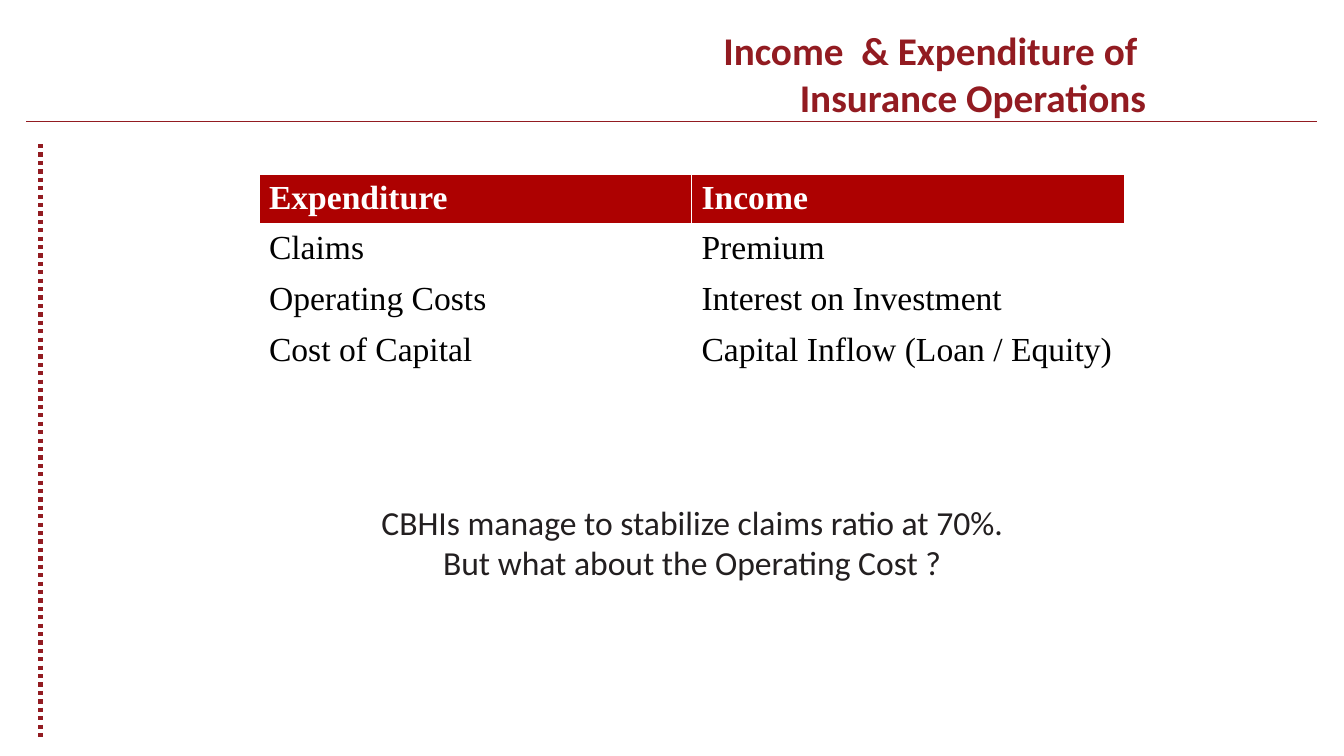
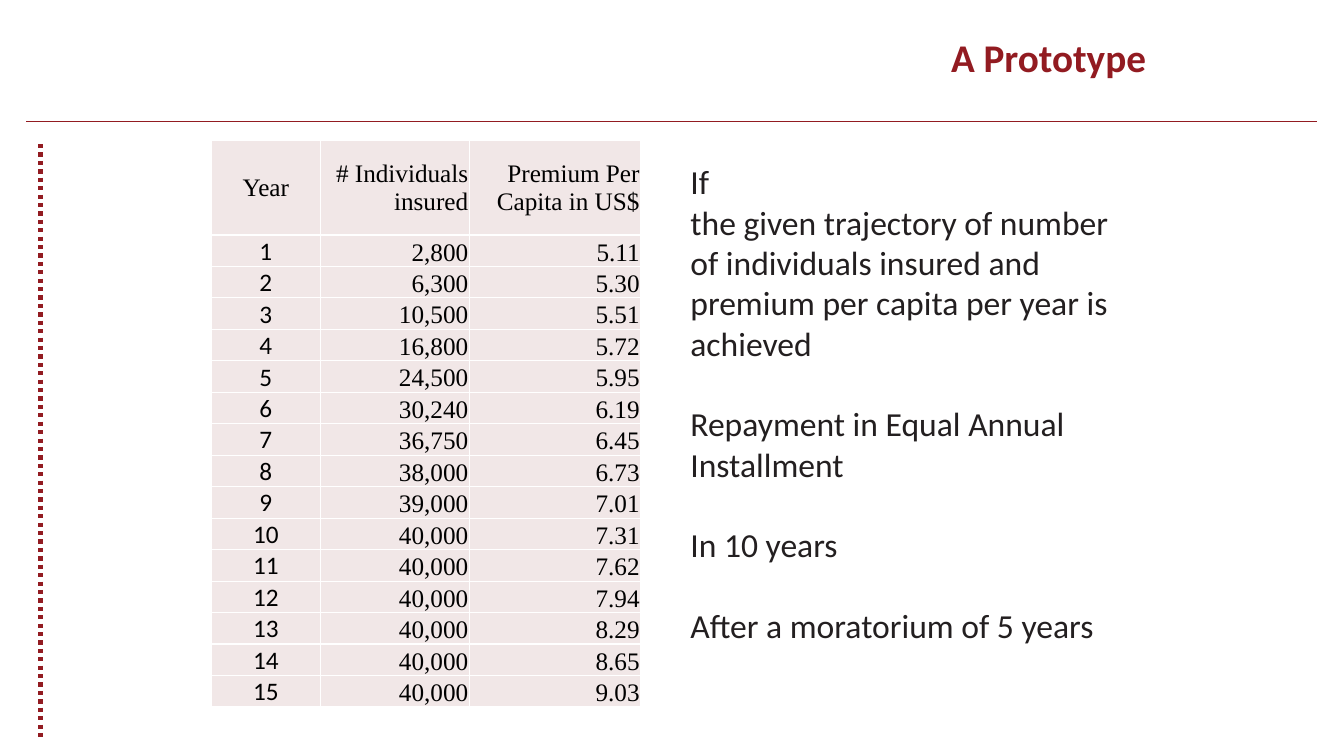
import dataclasses

import lxml.etree
import pptx
import pptx.dml.color
import pptx.enum.dml
import pptx.enum.shapes
import pptx.enum.text
import pptx.oxml.ns
import pptx.util

Cm = pptx.util.Cm
Pt = pptx.util.Pt
ALIGN = pptx.enum.text.PP_ALIGN
ANCHOR = pptx.enum.text.MSO_ANCHOR
qn = pptx.oxml.ns.qn


@dataclasses.dataclass(frozen=True)
class Theme:
    crimson: str = "921B21"
    header_red: str = "AD0101"
    blush: str = "F1E7E7"
    ink: str = "231F20"
    black: str = "000000"
    white: str = "FFFFFF"
    sans: str = "Calibri"
    serif: str = "Times New Roman"
    title_size: int = 28
    body_size: int = 24
    data_size: int = 18


THEME = Theme()
WIDTH, HEIGHT = 33.87, 19.05
CELL_INSETS = (0.25, 0.13, 0.25, 0.13)
TIGHT_INSETS = (0.03, 0.03, 0.03, 0)


def rgb(value):
    return pptx.dml.color.RGBColor.from_string(value)


def write(frame, *lines, size=THEME.body_size, font=THEME.sans, color=THEME.ink,
          bold=False, align=ALIGN.LEFT, gaps=()):
    """Fill a text frame, one paragraph a line; gaps lists the lines set one line lower."""
    frame.word_wrap = True
    for index, line in enumerate(lines):
        paragraph = frame.paragraphs[0] if index == 0 else frame.add_paragraph()
        paragraph.alignment = align
        paragraph.space_before = Pt(size * 1.2 if index in gaps else 0)
        run = paragraph.add_run()
        run.text = line
        run.font.size = Pt(size)
        run.font.name = font
        run.font.bold = bold
        run.font.color.rgb = rgb(color)


def add_text(slide, box, *lines, **style):
    frame = slide.shapes.add_textbox(*map(Cm, box)).text_frame
    write(frame, *lines, **style)


def add_line(slide, start, end, weight, dash=None):
    line = slide.shapes.add_connector(
        pptx.enum.shapes.MSO_CONNECTOR.STRAIGHT, *map(Cm, start + end))
    line.line.color.rgb = rgb(THEME.crimson)
    line.line.width = Pt(weight)
    if dash:
        line.line.dash_style = dash
    lxml.etree.SubElement(line._element.spPr, qn("a:effectLst"))


def add_page(deck, title_top, *title):
    """Add a slide with its header rule, dotted margin and right-aligned title."""
    slide = deck.slides.add_slide(deck.slide_layouts[6])
    add_line(slide, (0.66, 3.07), (33.2, 3.07), 0.75)
    add_line(slide, (1.02, 3.63), (1.02, 18.64), 3,
             pptx.enum.dml.MSO_LINE.ROUND_DOT)
    add_text(slide, (13.13, title_top, 16, 2.39), *title, size=THEME.title_size,
             color=THEME.crimson, bold=True, align=ALIGN.RIGHT)
    return slide


def add_grid(slide, left, top, widths, heights):
    """Add a plain table whose columns and rows have the given sizes."""
    table = slide.shapes.add_table(
        len(heights), len(widths), Cm(left), Cm(top),
        Cm(sum(widths)), Cm(sum(heights))).table
    table.first_row = table.horz_banding = False
    for column, width in zip(table.columns, widths):
        column.width = Cm(width)
    for row, height in zip(table.rows, heights):
        row.height = Cm(height)
    return table


def fill_cell(cell, text, fill=None, insets=CELL_INSETS, anchor=ANCHOR.TOP,
              bottom_weight=1, **style):
    write(cell.text_frame, text, **style)
    cell.vertical_anchor = anchor
    (cell.margin_left, cell.margin_top,
     cell.margin_right, cell.margin_bottom) = map(Cm, insets)
    properties = cell._tc.get_or_add_tcPr()
    for side in ("L", "R", "T", "B"):
        weight = bottom_weight if side == "B" else 1
        border = lxml.etree.SubElement(properties, qn(f"a:ln{side}"), w=str(Pt(weight)))
        solid = lxml.etree.SubElement(border, qn("a:solidFill"))
        lxml.etree.SubElement(solid, qn("a:srgbClr"), val=THEME.white)
    if fill:
        cell.fill.solid()
        cell.fill.fore_color.rgb = rgb(fill)
    else:
        cell.fill.background()


def add_balance_table(slide, left, top, rows):
    table = add_grid(slide, left, top, [10.9] * 2, [1.11] + [1.18] * (len(rows) - 1))
    for r, row in enumerate(rows):
        look = (dict(fill=THEME.header_red, color=THEME.white, bold=True, bottom_weight=3)
                if r == 0 else dict(color=THEME.black))
        for c, text in enumerate(row):
            fill_cell(table.cell(r, c), text, font=THEME.serif, **look)


def add_trajectory_table(slide, left, top, headings, records):
    """Number the records by year under the headings."""
    table = add_grid(slide, left, top, [2.74, 3.76, 4.32], [2.39] + [0.78] * len(records))
    rows = [headings] + [(str(year), *record) for year, record in enumerate(records, 1)]
    for r, row in enumerate(rows):
        for c, text in enumerate(row):
            heading, year = r == 0, c == 0
            fill_cell(table.cell(r, c), text, fill=THEME.blush, insets=TIGHT_INSETS,
                      anchor=ANCHOR.MIDDLE if heading or year else ANCHOR.BOTTOM,
                      align=ALIGN.CENTER if year else ALIGN.RIGHT,
                      font=THEME.sans if year and not heading else THEME.serif,
                      size=THEME.data_size, color=THEME.black)


def build_income_slide(deck):
    slide = add_page(deck, 0.53, "Income  & Expenditure of ", "Insurance Operations")
    add_balance_table(slide, 6.53, 4.39, [
        ("Expenditure", "Income"),
        ("Claims", "Premium"),
        ("Operating Costs", "Interest on Investment"),
        ("Cost of Capital", "Capital Inflow (Loan / Equity)"),
    ])
    add_text(slide, (7.54, 12.52, 19.81, 2.31),
             "CBHIs manage to stabilize claims ratio at 70%.",
             "But what about the Operating Cost ?", align=ALIGN.CENTER)


def build_prototype_slide(deck):
    slide = add_page(deck, 0.71, "A Prototype")
    add_trajectory_table(
        slide, 5.33, 3.53,
        ("Year", "# Individuals insured", "Premium Per Capita in US$"),
        [("2,800", "5.11"), ("6,300", "5.30"), ("10,500", "5.51"),
         ("16,800", "5.72"), ("24,500", "5.95"), ("30,240", "6.19"),
         ("36,750", "6.45"), ("38,000", "6.73"), ("39,000", "7.01"),
         ("40,000", "7.31"), ("40,000", "7.62"), ("40,000", "7.94"),
         ("40,000", "8.29"), ("40,000", "8.65"), ("40,000", "9.03")])
    add_text(slide, (17.15, 3.94, 11.2, 13.59),
             "If",
             "the given trajectory of number of individuals insured and "
             "premium per capita per year is achieved",
             "Repayment in Equal Annual Installment",
             "In 10 years",
             "After a moratorium of 5 years", gaps=(2, 3, 4))


def main():
    deck = pptx.Presentation()
    deck.slide_width, deck.slide_height = Cm(WIDTH), Cm(HEIGHT)
    build_income_slide(deck)
    build_prototype_slide(deck)
    deck.save("out.pptx")


if __name__ == "__main__":
    main()
